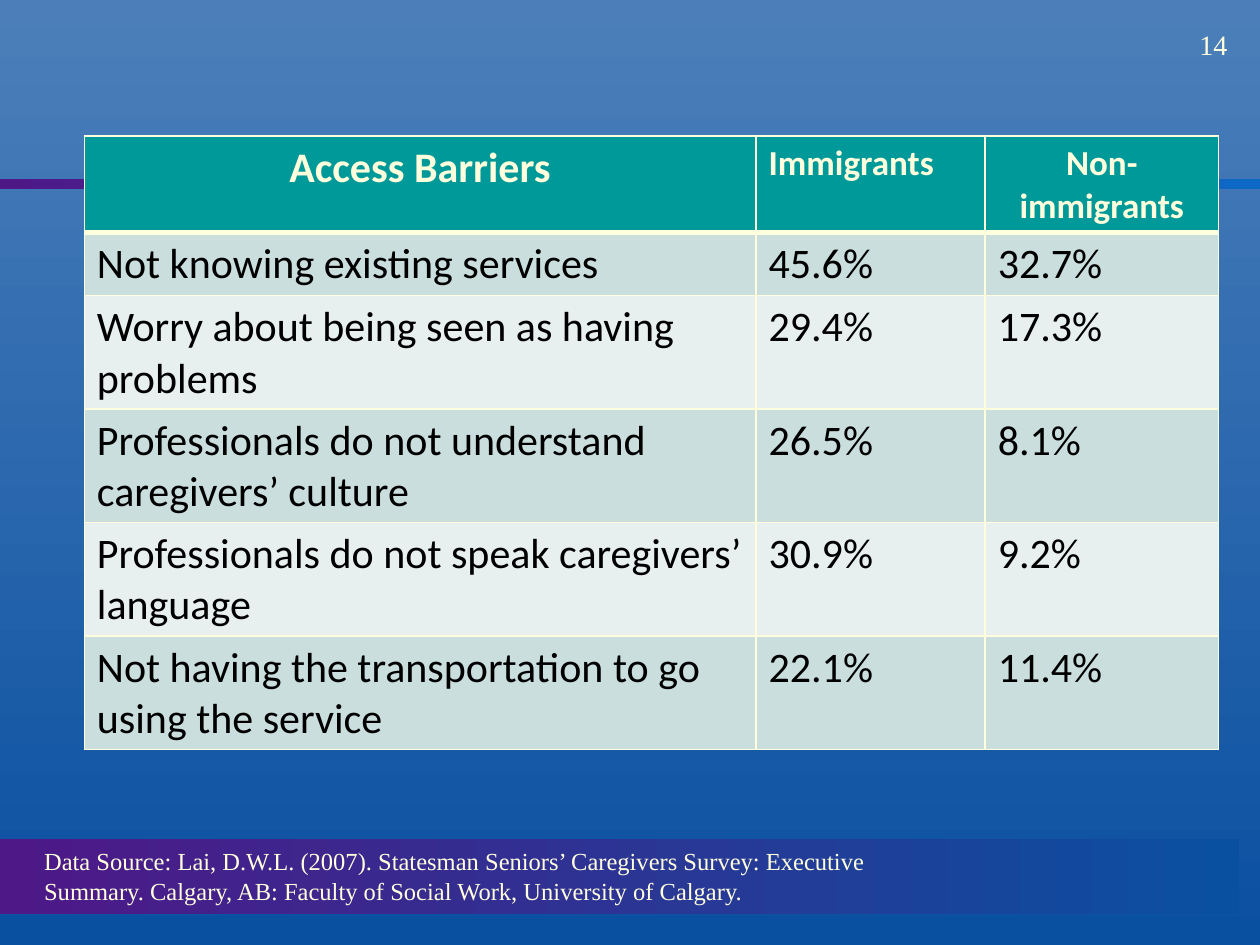
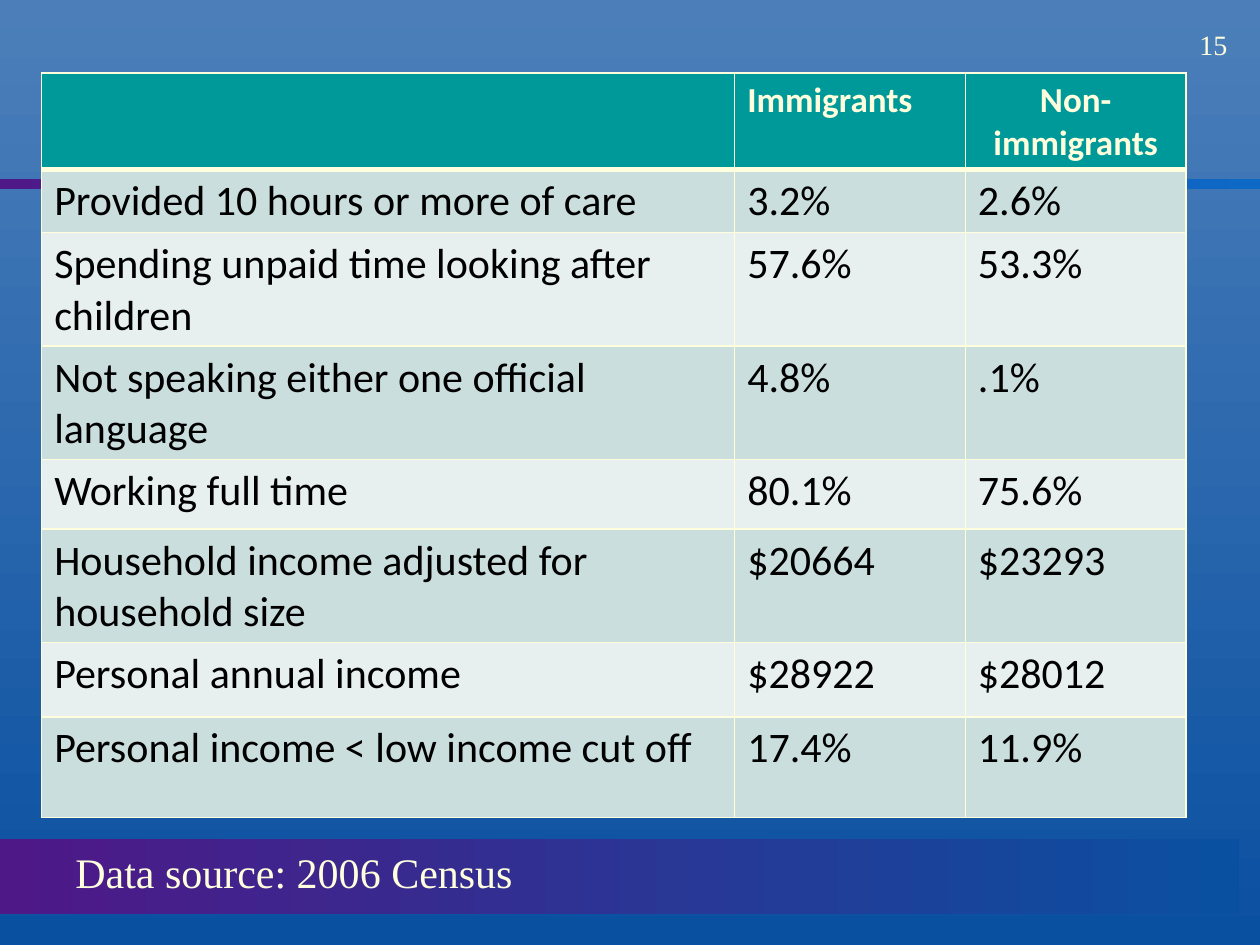
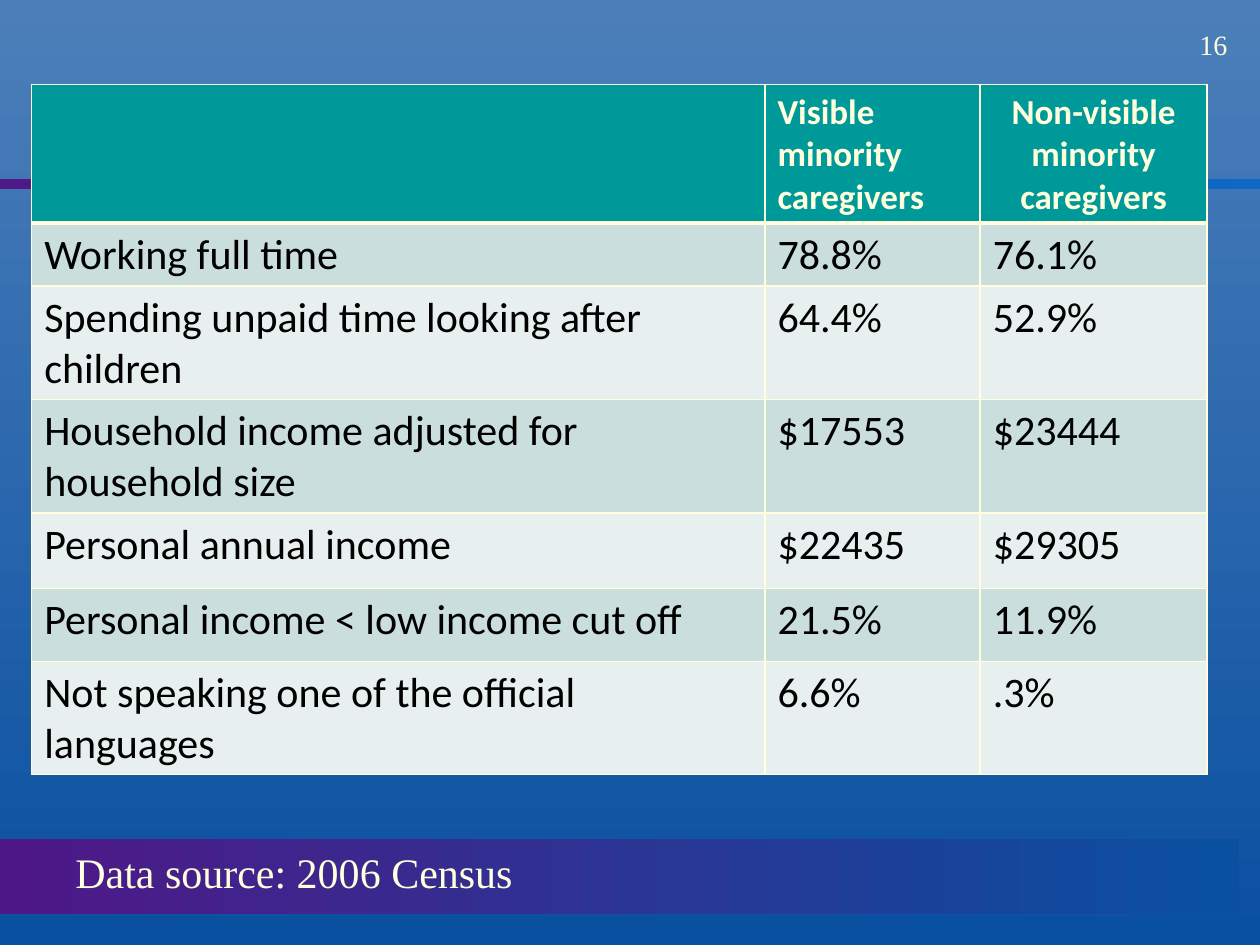
from dataclasses import dataclass

from lxml import etree
from pptx import Presentation
from pptx import util as u
from pptx.dml import color as dc
from pptx.dml.fill import FillFormat
from pptx.enum import shapes, text
from pptx.oxml import ns

HUES = {
    "sky": "4C7FBA",
    "sea": "0A50A1",
    "plum": "4E1887",
    "azure": "0C69C6",
    "cream": "FFFFDD",
    "teal": "009999",
    "mist": "CBDEDE",
    "pale": "E7EFEF",
    "black": "000000",
}
SERIF, SANS = "Times New Roman", "Calibri"


@dataclass
class Box:
    left: float
    top: float
    width: float
    height: float

    def place(self) -> list[u.Cm]:
        return [u.Cm(n) for n in (self.left, self.top, self.width, self.height)]


@dataclass
class Band:
    box: Box
    start: str
    end: str


@dataclass
class Style:
    size: int
    face: str = SERIF
    hue: str = "cream"
    bold: bool = False


@dataclass
class Note:
    box: Box
    words: str
    style: Style
    wrap: bool = False


@dataclass
class Grid:
    left: float
    top: float
    widths: list[float]
    heights: list[float]
    rows: list[tuple[str, str, str]]


@dataclass
class Page:
    grid: Grid
    note: Note


BANDS = [
    Band(Box(0, 3.61, 25.4, 0.2), "plum", "azure"),
    Band(Box(0, 16.92, 24.97, 1.5), "plum", "sea"),
]
FIRST = 14
COUNT = Box(23.93, 0.43, 1.19, 0.94)
HEAD = Style(24, SANS, bold=True)
SUBHEAD = Style(20, SANS, bold=True)
BODY = Style(24, SANS, "black")
CENSUS = Note(Box(1.27, 16.94, 9.63, 1.3), "Data source: 2006 Census", Style(24))

PAGES = [
    Page(
        Grid(1.7, 2.74, [13.54, 4.62, 4.7], [1.73, 1.24] + [2.24] * 4, [
            ("Access Barriers", "Immigrants", "Non-immigrants"),
            ("Not knowing existing services", "45.6%", "32.7%"),
            ("Worry about being seen as having problems", "29.4%", "17.3%"),
            ("Professionals do not understand caregivers’ culture", "26.5%", "8.1%"),
            ("Professionals do not speak caregivers’ language", "30.9%", "9.2%"),
            ("Not having the transportation to go using the service", "22.1%", "11.4%"),
        ]),
        Note(
            Box(0.64, 16.94, 17.15, 1.45),
            "Data Source: Lai, D.W.L. (2007). Statesman Seniors’ Caregivers Survey: "
            "Executive Summary. Calgary, AB: Faculty of Social Work, University of Calgary.",
            Style(14),
            wrap=True,
        ),
    ),
    Page(
        Grid(0.84, 1.47, [13.97, 4.65, 4.45], [1.88, 1.22, 2.18, 2.18, 1.4, 2.18, 1.5, 2.03], [
            ("", "Immigrants", "Non-immigrants"),
            ("Provided 10 hours or more of care", "3.2%", "2.6%"),
            ("Spending unpaid time looking after children", "57.6%", "53.3%"),
            ("Not speaking either one official language", "4.8%", ".1%"),
            ("Working full time", "80.1%", "75.6%"),
            ("Household income adjusted for household size", "$20664", "$23293"),
            ("Personal annual income", "$28922", "$28012"),
            ("Personal income < low income cut off", "17.4%", "11.9%"),
        ]),
        CENSUS,
    ),
    Page(
        Grid(0.64, 1.7, [14.78, 4.34, 4.57], [1.73, 1.24, 2.24, 2.24, 1.52, 1.47, 2.24], [
            ("", "Visible minority caregivers", "Non-visible minority caregivers"),
            ("Working full time", "78.8%", "76.1%"),
            ("Spending unpaid time looking after children", "64.4%", "52.9%"),
            ("Household income adjusted for household size", "$17553", "$23444"),
            ("Personal annual income", "$22435", "$29305"),
            ("Personal income < low income cut off", "21.5%", "11.9%"),
            ("Not speaking one of the official languages", "6.6%", ".3%"),
        ]),
        CENSUS,
    ),
]


def tint(name: str) -> dc.RGBColor:
    return dc.RGBColor.from_string(HUES[name])


def blend(fill: FillFormat, start: str, end: str, angle: int) -> None:
    fill.gradient()
    fill.gradient_angle = angle
    for stop, name in zip(fill.gradient_stops, (start, end)):
        stop.color.rgb = tint(name)


def write(para, words: str, style: Style) -> None:
    run = para.add_run()
    run.text = words
    run.font.size = u.Pt(style.size)
    run.font.name = style.face
    run.font.bold = style.bold
    run.font.color.rgb = tint(style.hue)


def dress(deck, slide) -> None:
    master = deck.slide_master
    blend(master.background.fill, "sky", "sea", 270)
    for band in BANDS:
        bar = slide.shapes.add_shape(shapes.MSO_SHAPE.RECTANGLE, *band.box.place())
        bar.shadow.inherit = False
        bar.line.fill.background()
        blend(bar.fill, band.start, band.end, 0)
        master.shapes.element.append(bar.element)


def add_note(slide, note: Note) -> None:
    frame = slide.shapes.add_textbox(*note.box.place()).text_frame
    frame.word_wrap = note.wrap
    frame.auto_size = text.MSO_AUTO_SIZE.SHAPE_TO_FIT_TEXT
    write(frame.paragraphs[0], note.words, note.style)


def edge(cell, row: int) -> None:
    props = cell._tc.get_or_add_tcPr()
    thick = {"T": 3 if row == 1 else 1, "B": 3 if row == 0 else 1}
    for side in "LRTB":
        line = etree.SubElement(props, ns.qn(f"a:ln{side}"), w=str(u.Pt(thick.get(side, 1))))
        fill = etree.SubElement(line, ns.qn("a:solidFill"))
        etree.SubElement(fill, ns.qn("a:srgbClr"), val=HUES["cream"])


def add_grid(slide, grid: Grid) -> None:
    box = Box(grid.left, grid.top, sum(grid.widths), sum(grid.heights))
    table = slide.shapes.add_table(len(grid.rows), len(grid.widths), *box.place()).table
    table.horz_banding = False
    for col, width in zip(table.columns, grid.widths):
        col.width = u.Cm(width)
    for r, (height, row) in enumerate(zip(grid.heights, grid.rows)):
        table.rows[r].height = u.Cm(height)
        for c, words in enumerate(row):
            cell = table.cell(r, c)
            edge(cell, r)
            cell.fill.solid()
            cell.fill.fore_color.rgb = tint("teal" if r == 0 else "mist" if r % 2 else "pale")
            para = cell.text_frame.paragraphs[0]
            if r == 0 and c != 1:
                para.alignment = text.PP_ALIGN.CENTER
            if words:
                write(para, words, BODY if r else SUBHEAD if c else HEAD)


def main() -> None:
    deck = Presentation()
    deck.slide_width, deck.slide_height = u.Cm(25.4), u.Cm(19.05)
    blank = deck.slide_layouts[6]
    for i, page in enumerate(PAGES):
        slide = deck.slides.add_slide(blank)
        if i == 0:
            dress(deck, slide)
        add_note(slide, Note(COUNT, str(FIRST + i), Style(16)))
        add_grid(slide, page.grid)
        add_note(slide, page.note)
    deck.save("out.pptx")


if __name__ == "__main__":
    main()
